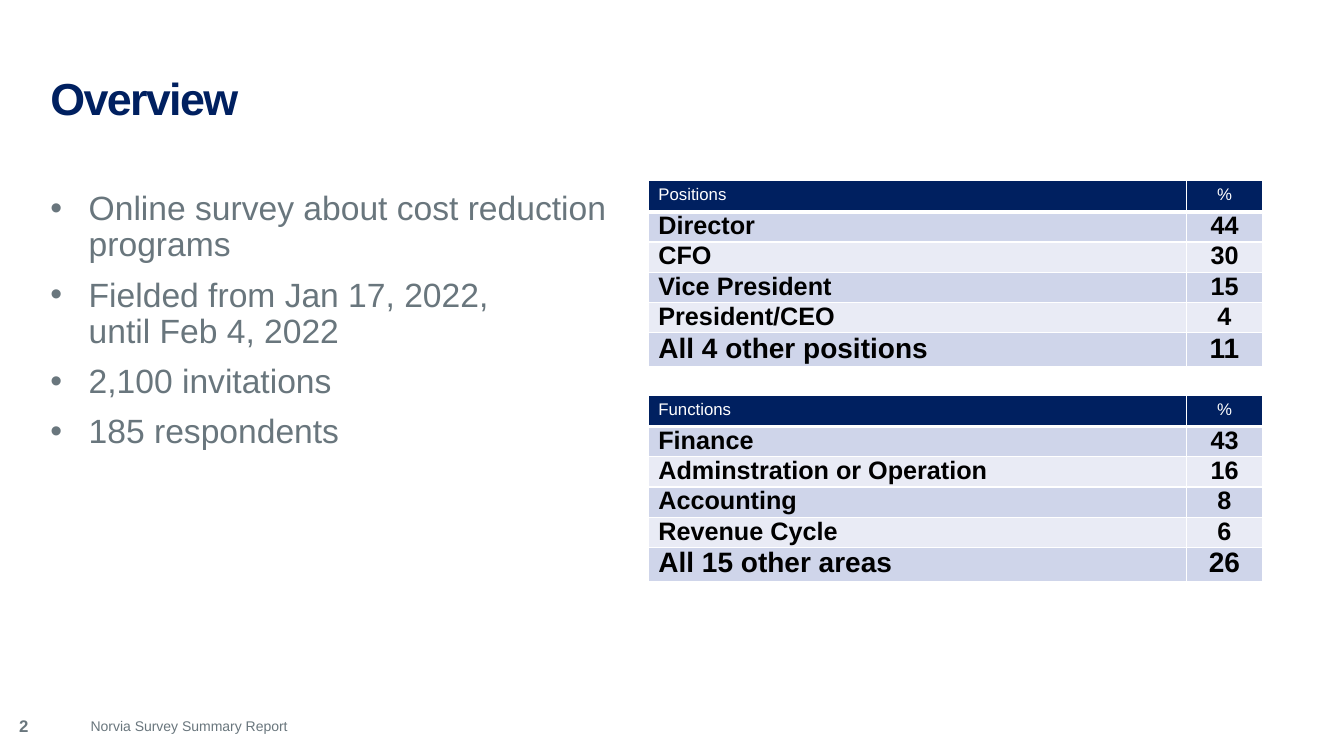
from dataclasses import dataclass

from pptx import Presentation
from pptx.dml.color import RGBColor as Color
from pptx.enum.text import MSO_ANCHOR as Anchor, PP_ALIGN as Align
from pptx.oxml import parse_xml
from pptx.oxml.ns import nsdecls
from pptx.util import Inches, Pt


@dataclass(frozen=True)
class Theme:
    """Colours, font and type sizes of the report."""
    font: str = "Arial"
    navy: str = "002060"
    grey: str = "69767D"
    black: str = "000000"
    white: str = "FFFFFF"
    bands: tuple = ("CFD5EA", "E9EBF5")
    title: int = 32
    body: int = 24
    total: int = 20
    row: int = 18
    small: int = 12
    footer: int = 10


class SlideBuilder:
    """Adds styled elements to the current slide."""

    def __init__(self, page, theme):
        """Keep the slide and its theme."""
        self.page = page
        self.theme = theme

    def style(self, para, size, color, bold=False):
        """Set the font of a whole paragraph."""
        font = para.font
        font.name, font.size, font.bold = self.theme.font, Pt(size), bold
        font.color.rgb = Color.from_string(color)

    def text(self, lines, place, size, color, bold=False, flush=False,
             spacing=None, bullet=False, anchor=Anchor.TOP):
        """Add a text box with one paragraph per line and return it."""
        box = self.page.shapes.add_textbox(*map(Inches, place))
        frame = box.text_frame
        frame.word_wrap, frame.vertical_anchor = True, anchor
        if flush:
            frame.margin_left = frame.margin_right = 0
            frame.margin_top = frame.margin_bottom = 0
        for index, line in enumerate(lines):
            para = frame.add_paragraph() if index else frame.paragraphs[0]
            para.text = line
            if spacing:
                para.line_spacing = spacing
            if index:
                para.space_before = Pt(10)
            if bullet:
                self.bullet(para)
            self.style(para, size, color, bold)
        return box

    def bullet(self, para):
        """Give a paragraph a hanging bullet."""
        props = para._p.get_or_add_pPr()
        props.set("marL", str(Inches(0.38)))
        props.set("indent", str(-Inches(0.38)))
        props.append(parse_xml(f'<a:buFont {nsdecls("a")} typeface="Arial"/>'))
        props.append(parse_xml(f'<a:buChar {nsdecls("a")} char="•"/>'))

    def title(self, wording, place):
        """Add the tightly tracked slide title."""
        box = self.text([wording], place, self.theme.title, self.theme.navy,
                        bold=True, flush=True, spacing=0.9, anchor=Anchor.MIDDLE)
        span = box.text_frame.paragraphs[0].runs[0]
        span._r.get_or_add_rPr().set("spc", "-120")

    def borders(self, cell, bottom):
        """Draw white lines around a table cell."""
        props = cell._tc.get_or_add_tcPr()
        for side, width in (("L", 1), ("R", 1), ("T", 1), ("B", bottom)):
            props.append(parse_xml(
                f'<a:ln{side} {nsdecls("a")} w="{Pt(width)}"><a:solidFill>'
                f'<a:srgbClr val="{self.theme.white}"/></a:solidFill></a:ln{side}>'))

    def cell(self, cell, wording, column, fill, size, color, header):
        """Fill and style one table cell."""
        self.borders(cell, 3 if header else 1)
        cell.fill.solid()
        cell.fill.fore_color.rgb = Color.from_string(fill)
        if not header:
            cell.margin_top = cell.margin_bottom = 0
        para = cell.text_frame.paragraphs[0]
        para.text = wording
        para.alignment = Align.CENTER if column else Align.LEFT
        self.style(para, size, color, bold=not header)

    def table(self, rows, left, top):
        """Add a share table with a header, banded rows and a larger last row."""
        theme, last = self.theme, len(rows) - 1
        widths = (5.34, 0.75)
        heights = [0.31] + [0.28] * (last - 1) + [0.31]
        table = self.page.shapes.add_table(
            len(rows), len(widths), Inches(left), Inches(top),
            Inches(sum(widths)), Inches(sum(heights))).table
        table.first_row = table.horz_banding = False
        for column, width in zip(table.columns, widths):
            column.width = Inches(width)
        for index, (row, height) in enumerate(zip(rows, heights)):
            table.rows[index].height = Inches(height)
            if index == 0:
                look = theme.navy, theme.small, theme.white, True
            else:
                size = theme.total if index == last else theme.row
                look = theme.bands[(index - 1) % 2], size, theme.black, False
            for column, wording in enumerate(row):
                self.cell(table.cell(index, column), wording, column, *look)


POSITIONS = [("Positions", "%"), ("Director", "44"), ("CFO", "30"),
             ("Vice President", "15"), ("President/CEO", "4"),
             ("All 4 other positions", "11")]
FUNCTIONS = [("Functions", "%"), ("Finance", "43"),
             ("Adminstration or Operation", "16"), ("Accounting", "8"),
             ("Revenue Cycle", "6"), ("All 15 other areas", "26")]
FACTS = ["Online survey about cost reduction programs",
         "Fielded from Jan 17, 2022, \vuntil Feb 4, 2022",
         "2,100 invitations", "185 respondents"]


def main():
    """Build and save the overview slide."""
    deck = Presentation()
    deck.slide_width, deck.slide_height = Inches(13.33), Inches(7.5)
    theme = Theme()
    builder = SlideBuilder(deck.slides.add_slide(deck.slide_layouts[6]), theme)
    builder.text(["2"], (0.09, 7.05, 0.45, 0.3), theme.small, theme.grey, bold=True)
    builder.text(["Norvia Survey Summary Report"], (0.8, 7.07, 9.75, 0.27),
                 theme.footer, theme.grey)
    builder.text(FACTS, (0.5, 1.9, 5.75, 4.55), theme.body, theme.grey,
                 flush=True, spacing=0.9, bullet=True)
    builder.title("Overview", (0.5, 0.5, 12.3, 1))
    for rows, top in ((POSITIONS, 1.79), (FUNCTIONS, 3.92)):
        builder.table(rows, 6.43, top)
    deck.save("out.pptx")


if __name__ == "__main__":
    main()
